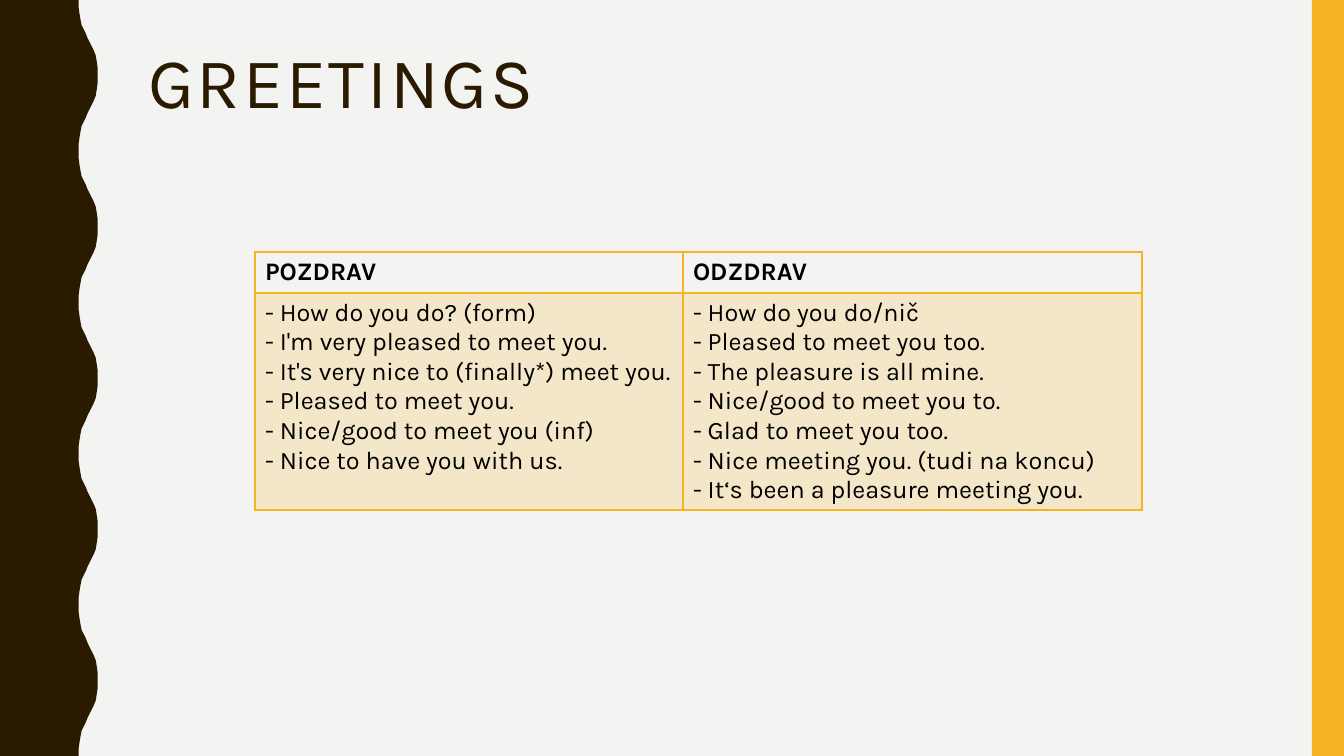
from lxml import etree
from pptx import Presentation
from pptx.dml.color import RGBColor
from pptx.enum.shapes import MSO_SHAPE
from pptx.enum.text import MSO_ANCHOR, PP_ALIGN
from pptx.oxml import parse_xml
from pptx.oxml.ns import nsdecls, qn
from pptx.util import Pt

# Content
TITLE = "GREETINGS"
HEADERS = ["POZDRAV", "ODZDRAV"]
PHRASES = [
    [
        "- How do you do? (form)",
        "- I'm very pleased to meet you.",
        "- It's very nice to (finally*) meet you.",
        "- Pleased to meet you.",
        "- Nice/good to meet you (inf)",
        "- Nice to have you with us.",
    ],
    [
        "- How do you do/nič",
        "- Pleased to meet you too.",
        "- The pleasure is all mine.",
        "- Nice/good to meet you to.",
        "- Glad to meet you too.",
        "- Nice meeting you. (tudi na koncu)",
        "- It‘s been a pleasure meeting you.",
    ],
]

# Look
FONT = "Karla"
COLORS = {"paper": "F3F3F2", "brown": "2A1A00", "gold": "F8B323", "black": "000000"}
WIDTH, HEIGHT = 1344, 756
COLUMNS = [428, 459]
ROWS = [41, 217]

# Rising half of one wave, in hundredths of an inch
HALF_WAVE = [(78, 0), (78, 7), (79, 14), (80, 20), (81, 25), (83, 29), (85, 33),
             (87, 38), (89, 42), (91, 46), (93, 50), (95, 55), (96, 61), (97, 68), (97, 75)]
WAVE_LENGTH, WAVES = 150, 5
WAVE_UNIT = 9144


def px(length):
    return round(length * 914400 / 100.8)


def color(name):
    return RGBColor.from_string(COLORS[name])


def paint(shape, name):
    shape.shadow.inherit = False
    shape.fill.solid()
    shape.fill.fore_color.rgb = color(name)
    shape.line.fill.background()


def style(paragraph, size, name, bold=False):
    for span in paragraph.runs:
        span.font.name = FONT
        span.font.size = Pt(size)
        span.font.bold = bold
        span.font.color.rgb = color(name)


def add_borders(cell):
    properties = cell._tc.get_or_add_tcPr()
    for side in "LRTB":
        properties.append(parse_xml(
            f'<a:ln{side} {nsdecls("a")} w="{Pt(1)}"><a:solidFill>'
            f'<a:srgbClr val="{COLORS["gold"]}"/></a:solidFill></a:ln{side}>'))


def fill_cell(cell, text, header):
    cell.text_frame.text = text
    for paragraph in cell.text_frame.paragraphs:
        style(paragraph, 18, "black", bold=header)
    add_borders(cell)
    if header:
        cell.fill.background()
        return
    cell.fill.solid()
    cell.fill.fore_color.rgb = color("gold")
    tint = cell._tc.tcPr.find(qn("a:solidFill")).find(qn("a:srgbClr"))
    etree.SubElement(tint, qn("a:alpha"), val="20000")


deck = Presentation()
deck.slide_width, deck.slide_height = px(WIDTH), px(HEIGHT)
page = deck.slides.add_slide(deck.slide_layouts[5])
page.background.fill.solid()
page.background.fill.fore_color.rgb = color("paper")

# Wavy left edge
wave = HALF_WAVE + [(x, WAVE_LENGTH - y) for x, y in HALF_WAVE[-2::-1]]
outline = [(x, y + turn * WAVE_LENGTH) for turn in range(WAVES) for x, y in wave]
builder = page.shapes.build_freeform(0, 0, scale=WAVE_UNIT)
builder.add_line_segments(outline + [(0, WAVES * WAVE_LENGTH)], close=True)
paint(builder.convert_to_shape(), "brown")

# Right band
band = page.shapes.add_shape(MSO_SHAPE.RECTANGLE, px(1312), 0, px(32), px(HEIGHT))
paint(band, "gold")

# Title
title = page.shapes.title
title.left, title.top, title.width, title.height = px(138), px(42), px(1122), px(164)
title.text_frame.text = TITLE
title.text_frame.vertical_anchor = MSO_ANCHOR.TOP
heading = title.text_frame.paragraphs[0]
heading.alignment = PP_ALIGN.LEFT
heading.line_spacing = 0.9
style(heading, 51, "brown")
heading.runs[0].font._element.set("spc", "200")

# Table of greetings and replies
frame = page.shapes.add_table(len(ROWS), len(COLUMNS), px(255), px(252),
                              px(sum(COLUMNS)), px(sum(ROWS)))
table = frame.table
table.horz_banding = False
for row, height in zip(table.rows, ROWS):
    row.height = px(height)
for index, width in enumerate(COLUMNS):
    table.columns[index].width = px(width)
    fill_cell(table.cell(0, index), HEADERS[index], header=True)
    fill_cell(table.cell(1, index), "\n".join(PHRASES[index]), header=False)

deck.save("out.pptx")
